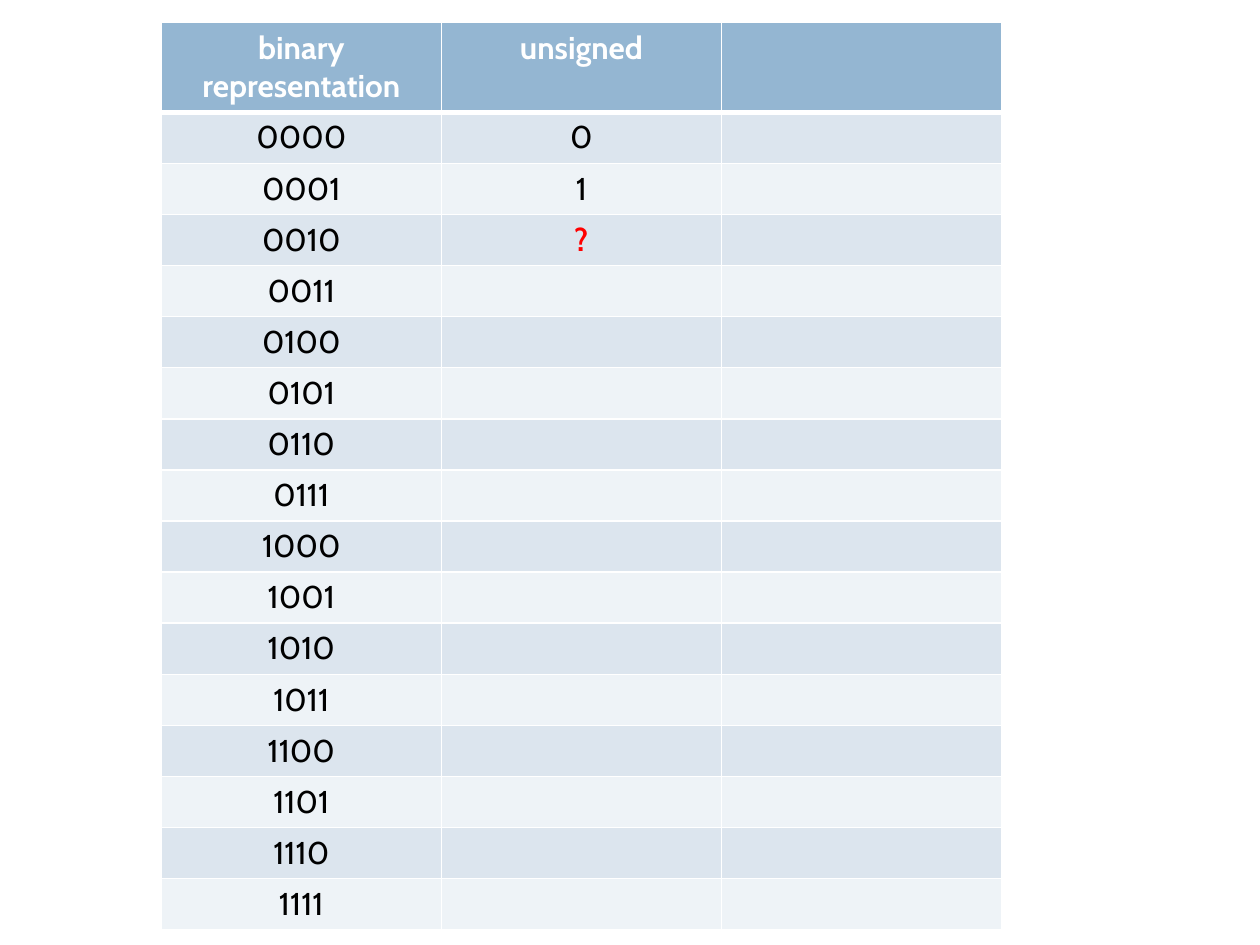
from dataclasses import dataclass

from pptx import Presentation as Deck
from pptx.dml.color import RGBColor as Color
from pptx.enum.text import PP_ALIGN as Align
from pptx.oxml import parse_xml as to_xml
from pptx.oxml.ns import nsdecls as names
from pptx.util import Inches, Pt


@dataclass(frozen=True)
class Theme:
    font: str = "Cabin"
    size: int = 18
    head: str = "94B6D2"
    bands: tuple = ("EEF3F7", "DCE5EE")
    white: str = "FFFFFF"
    ink: str = "000000"
    mark: str = "FF0000"
    thin: int = 1
    thick: int = 3


class Page:
    def __init__(self, deck, theme):
        self.theme = theme
        self.slide = deck.slides.add_slide(deck.slide_layouts[6])

    def table(self, rows, left, top, width, height, head):
        shape = self.slide.shapes.add_table(
            len(rows), len(rows[0]),
            Inches(left), Inches(top), Inches(width), Inches(height))
        grid = shape.table
        for col in grid.columns:
            col.width = Inches(width / len(rows[0]))
        step = (height - head) / (len(rows) - 1)
        for r, texts in enumerate(rows):
            grid.rows[r].height = Inches(step if r else head)
            for c, text in enumerate(texts):
                cell = grid.cell(r, c)
                self.border(cell, r)
                self.paint(cell, r)
                self.label(cell, text, r)

    def border(self, cell, row):
        look = self.theme
        sides = {
            "L": look.thin,
            "R": look.thin,
            "T": look.thick if row == 1 else look.thin,
            "B": look.thick if row == 0 else look.thin,
        }
        props = cell._tc.get_or_add_tcPr()
        for side, width in sides.items():
            props.append(to_xml(
                f'<a:ln{side} {names("a")} w="{Pt(width)}"><a:solidFill>'
                f'<a:srgbClr val="{look.white}"/></a:solidFill></a:ln{side}>'))

    def paint(self, cell, row):
        look = self.theme
        cell.fill.solid()
        tint = look.bands[row % 2] if row else look.head
        cell.fill.fore_color.rgb = Color.from_string(tint)

    def label(self, cell, text, row):
        look = self.theme
        para = cell.text_frame.paragraphs[0]
        para.alignment = Align.CENTER
        font = para.font
        if text:
            run = para.add_run()
            run.text = text
            font = run.font
        style = {
            "name": look.font,
            "size": Pt(look.size),
            "bold": row == 0 or text == "?",
        }
        for key, value in style.items():
            setattr(font, key, value)
        tint = look.mark if text == "?" else look.ink if row else look.white
        font.color.rgb = Color.from_string(tint)


def main():
    deck = Deck()
    deck.slide_width, deck.slide_height = Inches(10), Inches(7.5)
    page = Page(deck, Theme())
    known = {0: "0", 1: "1", 2: "?"}
    rows = [("binary representation", "unsigned", "")]
    rows += [(f"{n:04b}", known.get(n, ""), "") for n in range(16)]
    page.table(rows, 1.28, 0.18, 6.67, 7.19, head=0.7)
    deck.save("out.pptx")


if __name__ == "__main__":
    main()
